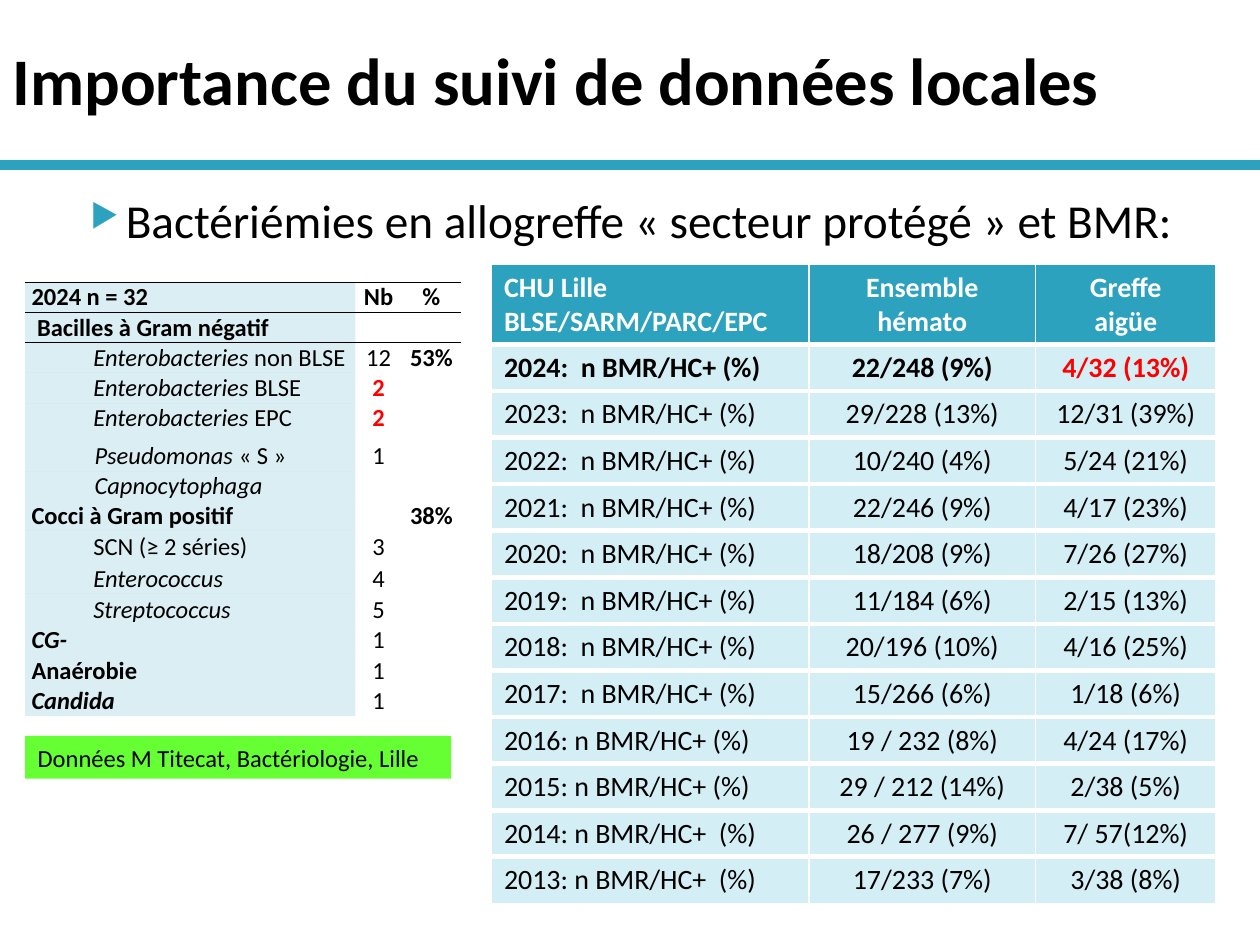
from lxml import etree
from pptx import Presentation
from pptx.dml.color import RGBColor
from pptx.enum.shapes import MSO_CONNECTOR as CONN, MSO_SHAPE as SHAPE
from pptx.enum.text import MSO_ANCHOR as ANCHOR, MSO_AUTO_SIZE as AUTO, PP_ALIGN as ALIGN
from pptx.oxml.ns import qn
from pptx.util import Inches, Pt

FONT = "Calibri"
TEAL, PALE, WHITE, BLACK, RED = "2DA2BF", "D3EEF5", "FFFFFF", "000000", "FF0000"
NO_STYLE = "{2D5ABB26-0587-4C30-8999-92F81FD0307C}"

# Label, all haematology, acute transplant
BMR_ROWS = [
    ("CHU Lille\nBLSE/SARM/PARC/EPC", "Ensemble\nhémato", "Greffe\naigüe"),
    ("2024:  n BMR/HC+ (%)", "22/248 (9%)", "4/32 (13%)"),
    ("2023:  n BMR/HC+ (%)", "29/228 (13%)", "12/31 (39%)"),
    ("2022:  n BMR/HC+ (%)", "10/240 (4%)", "5/24 (21%)"),
    ("2021:  n BMR/HC+ (%)", "22/246 (9%)", "4/17 (23%)"),
    ("2020:  n BMR/HC+ (%)", "18/208 (9%)", "7/26 (27%)"),
    ("2019:  n BMR/HC+ (%)", "11/184 (6%)", "2/15 (13%)"),
    ("2018:  n BMR/HC+ (%)", "20/196 (10%)", "4/16 (25%)"),
    ("2017:  n BMR/HC+ (%)", "15/266 (6%)", "1/18 (6%)"),
    ("2016: n BMR/HC+ (%)", "19 / 232 (8%)", "4/24 (17%)"),
    ("2015: n BMR/HC+ (%)", "29 / 212 (14%)", "2/38 (5%)"),
    ("2014: n BMR/HC+  (%)", "26 / 277 (9%)", "7/ 57(12%)"),
    ("2013: n BMR/HC+  (%)", "17/233 (7%)", "3/38 (8%)"),
]

# Height, indent, label runs as (text, style), count, share
GERM_ROWS = [
    (0.24, 0, [("2024 n = 32", "b")], "Nb", "%"),
    (0.24, 0, [("\u00a0Bacilles à Gram négatif", "b")], "", ""),
    (0.24, 0.49, [("Enterobacteries", "i"), (" non BLSE", "")], "12", "53%"),
    (0.24, 0.49, [("Enterobacteries ", "i"), ("BLSE", "")], "2", ""),
    (0.24, 0.49, [("Enterobacteries ", "i"), ("EPC", "")], "2", ""),
    (0.3, 0.5, [("Pseudomonas", "i"), (" « S »", "")], "1", ""),
    (0.24, 0.5, [("Capnocytophaga", "i")], "", ""),
    (0.23, 0, [("Cocci à Gram positif", "b")], "", "38%"),
    (0.25, 0.49, [("SCN (≥ 2 séries)", "")], "3", ""),
    (0.25, 0.49, [("Enterococcus", "i")], "4", ""),
    (0.25, 0.49, [("Streptococcus", "i")], "5", ""),
    (0.24, 0, [("CG-", "bi")], "1", ""),
    (0.24, 0, [("Anaérobie", "b")], "1", ""),
    (0.24, 0, [("Candida", "bi")], "1", ""),
]


def rgb(color):
    return RGBColor.from_string(color)


def add_text(p, text, size=14, color=BLACK, bold=False, italic=False, align=ALIGN.LEFT):
    p.alignment = align
    r = p.add_run()
    r.text = text
    f = r.font
    f.name, f.size, f.bold, f.italic = FONT, Pt(size), bold, italic
    f.color.rgb = rgb(color)


def set_borders(cell, **sides):
    """Sides L, R, T, B take (colour, points)."""
    tcPr = cell._tc.get_or_add_tcPr()
    for side in "LRTB":
        if side in sides:
            color, width = sides[side]
            ln = etree.SubElement(tcPr, qn(f"a:ln{side}"), w=str(Pt(width)))
            fill = etree.SubElement(ln, qn("a:solidFill"))
            etree.SubElement(fill, qn("a:srgbClr"), val=color)


def set_fill(cell, color, alpha=None):
    cell.fill.solid()
    cell.fill.fore_color.rgb = rgb(color)
    if alpha:
        clr = cell._tc.tcPr.find(".//" + qn("a:solidFill") + "[last()]/" + qn("a:srgbClr"))
        for node in cell._tc.tcPr.findall(qn("a:solidFill")):
            clr = node.find(qn("a:srgbClr"))
        etree.SubElement(clr, qn("a:alpha"), val=str(alpha * 1000))


def add_plain_table(s, left, top, widths, heights):
    frame = s.shapes.add_table(len(heights), len(widths), Inches(left), Inches(top),
                               Inches(sum(widths)), Inches(sum(heights)))
    table = frame.table
    table.first_row = table.horz_banding = False
    table._tbl.tblPr.find(qn("a:tableStyleId")).text = NO_STYLE
    for col, width in zip(table.columns, widths):
        col.width = Inches(width)
    for row, height in zip(table.rows, heights):
        row.height = Inches(height)
    return table


def add_header(s, left, top, width, height):
    # Title and rule
    title = s.shapes.title
    title.left, title.top, title.width, title.height = map(Inches, (left, top, width, height))
    tf = title.text_frame
    tf.word_wrap, tf.auto_size, tf.vertical_anchor = True, AUTO.NONE, ANCHOR.MIDDLE
    add_text(tf.paragraphs[0], "Importance du suivi de données locales", size=38, bold=True)
    y = Inches(top + height + 0.06)
    rule = s.shapes.add_connector(CONN.STRAIGHT, Inches(left), y, Inches(left + width), y)
    rule.line.color.rgb, rule.line.width = rgb(TEAL), Pt(6)
    etree.SubElement(rule._element.spPr, qn("a:effectLst"))


def add_bullet_line(s, left, top, width, height):
    tf = s.shapes.add_textbox(*map(Inches, (left, top, width, height))).text_frame
    tf.word_wrap = True
    p = tf.paragraphs[0]
    pPr = p._p.get_or_add_pPr()
    pPr.set("marL", str(Inches(0.4)))
    pPr.set("indent", str(Inches(-0.28)))
    clr = etree.SubElement(pPr, qn("a:buClr"))
    etree.SubElement(clr, qn("a:srgbClr"), val=TEAL)
    etree.SubElement(pPr, qn("a:buSzPct"), val="68000")
    etree.SubElement(pPr, qn("a:buChar"), char="▶")
    add_text(p, "Bactériémies en allogreffe « secteur protégé » et BMR:", size=27)


def add_bmr_table(s, left, top):
    heights = [0.63] + [0.37] * (len(BMR_ROWS) - 1)
    table = add_plain_table(s, left, top, [2.52, 1.8, 1.43], heights)
    last = len(BMR_ROWS) - 1
    for i, row in enumerate(BMR_ROWS):
        for j, text in enumerate(row):
            cell = table.cell(i, j)
            set_borders(cell, L=(WHITE, 1), R=(WHITE, 1), T=(WHITE, 3 if i else 1),
                        B=(WHITE, 1 if i == last else 3))
            set_fill(cell, PALE if i else TEAL)
            color = WHITE if i == 0 else RED if (i, j) == (1, 2) else BLACK
            tf = cell.text_frame
            for k, line in enumerate(text.split("\n")):
                p = tf.add_paragraph() if k else tf.paragraphs[0]
                add_text(p, line, size=16, color=color, bold=i < 2,
                         align=ALIGN.CENTER if j else ALIGN.LEFT)


def add_germ_table(s, left, top):
    table = add_plain_table(s, left, top, [2.62, 0.37, 0.47], [row[0] for row in GERM_ROWS])
    for i, (_, indent, label, count, share) in enumerate(GERM_ROWS):
        for j in range(3):
            cell = table.cell(i, j)
            cell.margin_left = cell.margin_right = Inches(0.05)
            cell.margin_top = cell.margin_bottom = 0
            cell.vertical_anchor = ANCHOR.BOTTOM if i else ANCHOR.TOP
            if i == 0:
                set_borders(cell, T=(BLACK, 1), B=(BLACK, 1))
            elif i == 1:
                set_borders(cell, T=(BLACK, 1))
            p = cell.text_frame.paragraphs[0]
            if j == 0:
                set_fill(cell, "4BACC6", alpha=20)
                p._p.get_or_add_pPr().set("marL", str(Inches(indent)))
                for text, style in label:
                    add_text(p, text, bold="b" in style, italic="i" in style)
                continue
            cell.fill.background()
            text = (count, share)[j - 1]
            resistant = j == 1 and label[-1][0] in ("BLSE", "EPC")
            if text:
                add_text(p, text, color=RED if resistant else BLACK,
                         bold=i == 0 or j == 2 or resistant, align=ALIGN.CENTER)
            else:
                # Keeps empty cells from stretching the row
                etree.SubElement(p._p, qn("a:endParaRPr"), sz="1400")


def add_source_note(s, left, top, width, height):
    sp = s.shapes.add_shape(SHAPE.RECTANGLE, *map(Inches, (left, top, width, height)))
    sp.shadow.inherit = False
    sp.fill.solid()
    sp.fill.fore_color.rgb = rgb("66FF33")
    sp.line.fill.background()
    sp.text_frame.word_wrap = True
    add_text(sp.text_frame.paragraphs[0], "Données M Titecat, Bactériologie, Lille")


def main():
    prs = Presentation()
    prs.slide_width, prs.slide_height = Inches(10), Inches(7.5)
    s = prs.slides.add_slide(prs.slide_layouts[5])
    add_header(s, 0, 0, 10, 1.25)
    add_bullet_line(s, 0.5, 1.47, 9, 0.6)
    add_bmr_table(s, 3.9, 2.1)
    add_source_note(s, 0.2, 5.84, 3.38, 0.34)
    add_germ_table(s, 0.2, 2.24)
    prs.save("out.pptx")


if __name__ == "__main__":
    main()
